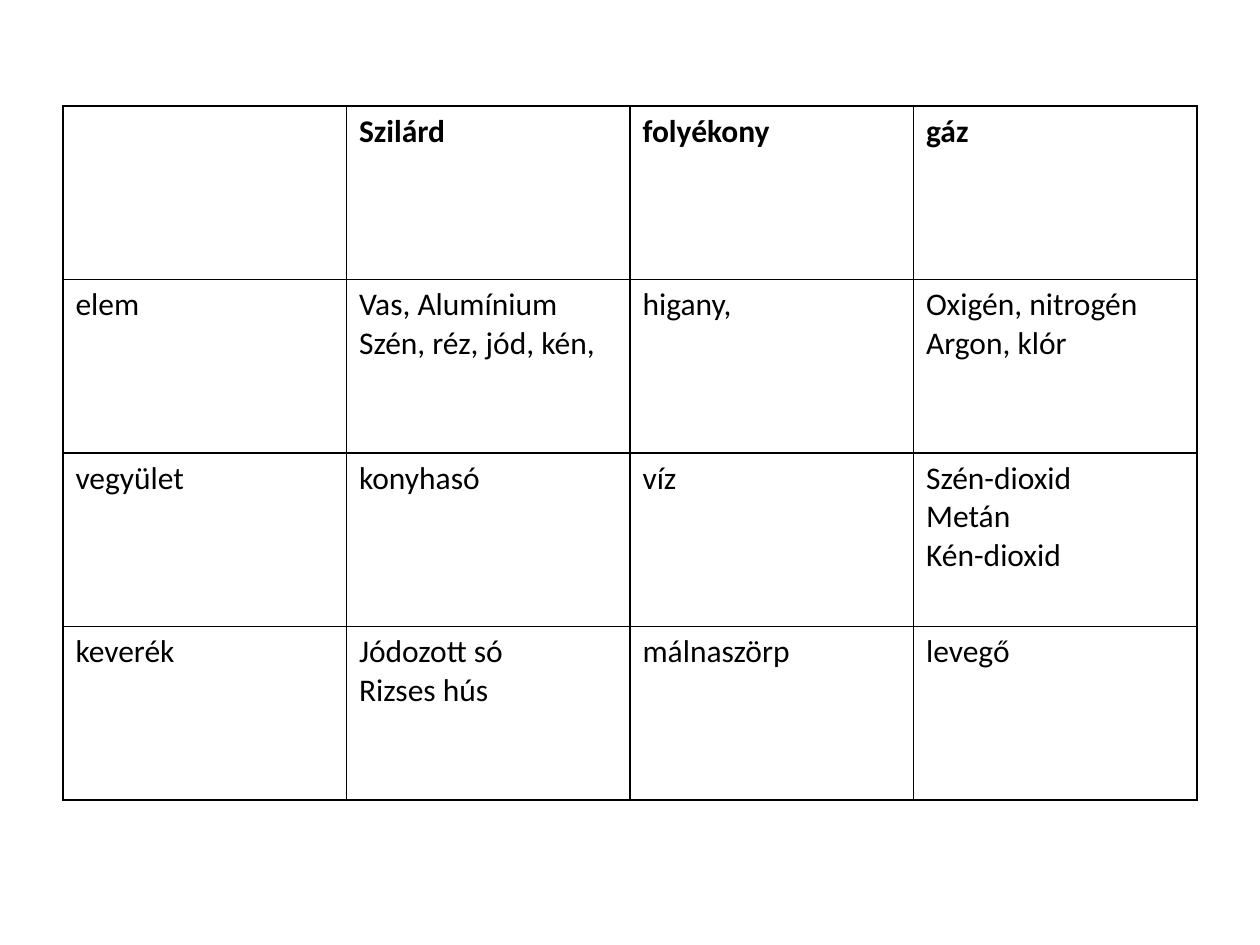
from lxml import etree
from pptx import Presentation
from pptx.dml.color import RGBColor
from pptx.oxml.ns import qn
from pptx.util import Pt

PX = 9144
FONT = "Calibri"
COLORS = {"paper": "FFFFFF", "ink": "000000"}
BORDER_SIDES = ("a:lnL", "a:lnR", "a:lnT", "a:lnB")
MATTER_ROWS = [
    ["", "Szilárd", "folyékony", "gáz"],
    ["elem", "Vas, Alumínium\nSzén, réz, jód, kén,", "higany,",
     "Oxigén, nitrogén\nArgon, klór"],
    ["vegyület", "konyhasó", "víz", "Szén-dioxid\nMetán\nKén-dioxid"],
    ["keverék", "Jódozott só\nRizses hús", "málnaszörp", "levegő"],
]


def px(length):
    return length * PX


def set_borders(cell):
    properties = cell._tc.get_or_add_tcPr()
    for position, side in enumerate(BORDER_SIDES):
        line = etree.Element(qn(side), w=str(Pt(1)))
        fill = etree.SubElement(line, qn("a:solidFill"))
        etree.SubElement(fill, qn("a:srgbClr"), val=COLORS["ink"])
        properties.insert(position, line)


def write_cell(cell, text, bold):
    cell.fill.solid()
    cell.fill.fore_color.rgb = RGBColor.from_string(COLORS["paper"])
    set_borders(cell)
    if not text:
        return
    frame = cell.text_frame
    for index, words in enumerate(text.split("\n")):
        para = frame.add_paragraph() if index else frame.paragraphs[0]
        span = para.add_run()
        span.text = words
        span.font.name = FONT
        span.font.size = Pt(18)
        span.font.bold = bold
        span.font.color.rgb = RGBColor.from_string(COLORS["ink"])


def add_matter_table(page, left, top, width, height):
    table = page.shapes.add_table(
        len(MATTER_ROWS), len(MATTER_ROWS[0]),
        px(left), px(top), px(width), px(height)).table
    table.horz_banding = False
    for row_index, texts in enumerate(MATTER_ROWS):
        for column_index, text in enumerate(texts):
            write_cell(table.cell(row_index, column_index), text,
                       bold=row_index == 0)


def main():
    deck = Presentation()
    deck.slide_width = px(1000)
    deck.slide_height = px(750)
    page = deck.slides.add_slide(deck.slide_layouts[6])
    add_matter_table(page, 50, 84, 900, 551)
    deck.save("out.pptx")


if __name__ == "__main__":
    main()
